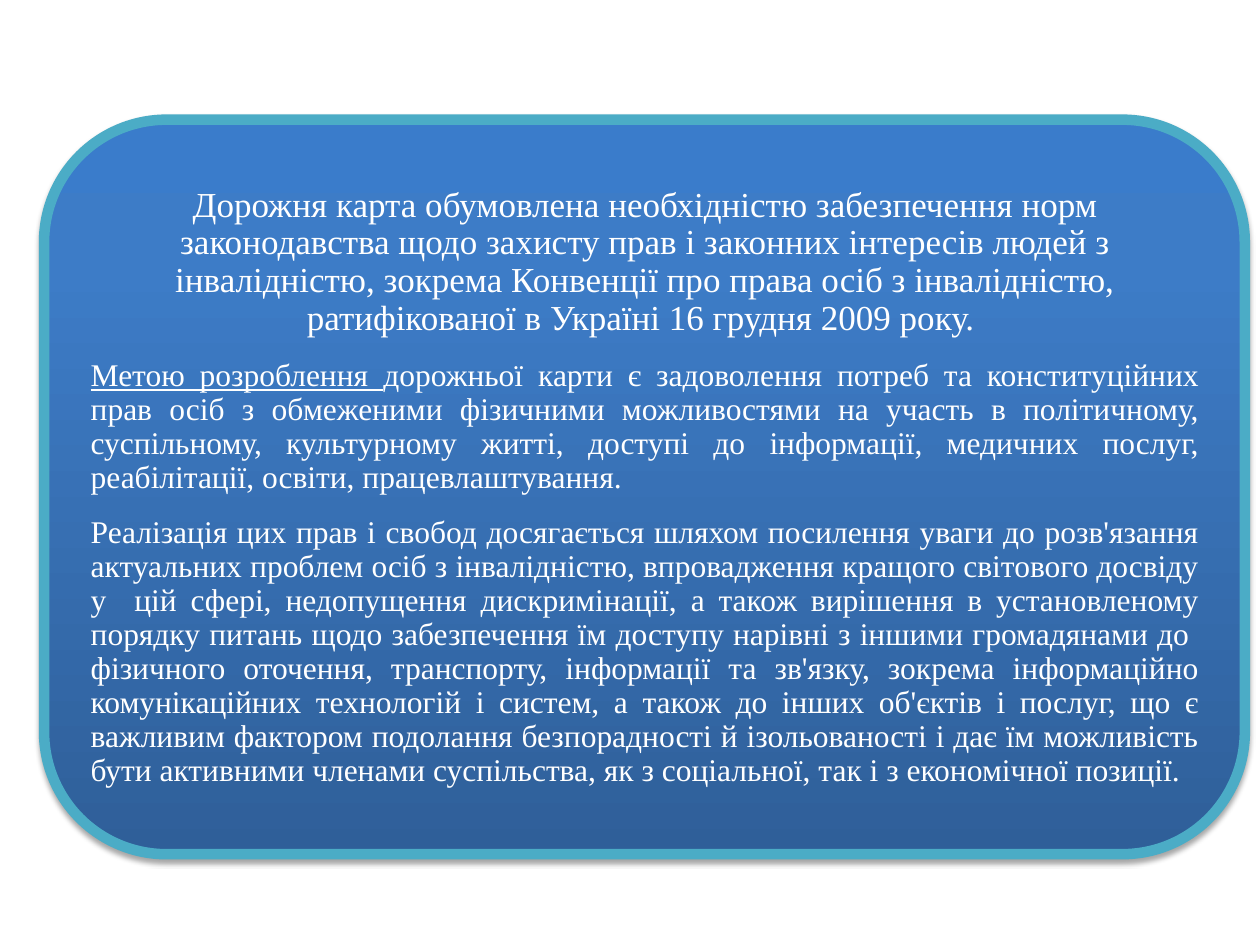
from copy import deepcopy
from dataclasses import dataclass

from lxml.etree import SubElement
from pptx import Presentation
from pptx.dml.color import RGBColor
from pptx.enum.shapes import MSO_SHAPE
from pptx.enum.text import MSO_ANCHOR, PP_ALIGN
from pptx.oxml.ns import qn
from pptx.shapes.autoshape import Shape
from pptx.slide import Slide
from pptx.text.text import TextFrame
from pptx.util import Inches, Pt


@dataclass(frozen=True)
class Statement:
    text: str
    size: int = 18
    align: PP_ALIGN = PP_ALIGN.JUSTIFY
    lead: str = ""


@dataclass(frozen=True)
class Stop:
    position: float
    color: str


STATEMENTS = (
    Statement(
        "Дорожня карта обумовлена необхідністю забезпечення норм законодавства "
        "щодо захисту прав і законних інтересів людей з інвалідністю, зокрема "
        "Конвенції про права осіб з інвалідністю, ратифікованої в Україні "
        "16 грудня 2009 року. ",
        size=20,
        align=PP_ALIGN.CENTER,
    ),
    Statement(
        "дорожньої карти є задоволення потреб та конституційних прав осіб з "
        "обмеженими фізичними можливостями на участь в політичному, суспільному, "
        "культурному житті, доступі до інформації, медичних послуг, реабілітації, "
        "освіти, працевлаштування.",
        lead="Метою розроблення ",
    ),
    Statement(
        "Реалізація цих прав і свобод досягається шляхом посилення уваги до "
        "розв'язання актуальних проблем осіб з інвалідністю, впровадження кращого "
        "світового досвіду у  цій сфері, недопущення дискримінації, а також "
        "вирішення в установленому порядку питань щодо забезпечення їм доступу "
        "нарівні з іншими громадянами до  фізичного оточення, транспорту, "
        "інформації та зв'язку, зокрема інформаційно комунікаційних технологій і "
        "систем, а також до інших об'єктів і послуг, що є важливим фактором "
        "подолання безпорадності й ізольованості і дає їм можливість бути "
        "активними членами суспільства, як з соціальної, так і з економічної "
        "позиції.",
    ),
)
PANEL_STOPS = (Stop(0, "2F5F99"), Stop(0.8, "3D7CC7"), Stop(1, "3A7CCB"))


def rgb(color: str) -> RGBColor:
    return RGBColor.from_string(color)


def fill_gradient(panel: Shape, stops: tuple[Stop, ...]) -> None:
    panel.fill.gradient()
    panel.fill.gradient_angle = 90
    stop_list = panel.fill._xPr.find(qn("a:gradFill")).find(qn("a:gsLst"))
    while len(stop_list) < len(stops):
        stop_list.append(deepcopy(stop_list[-1]))
    for target, stop in zip(panel.fill.gradient_stops, stops):
        target.position = stop.position
        target.color.rgb = rgb(stop.color)


def add_soft_shadow(panel: Shape) -> None:
    panel.shadow.inherit = False
    effects = panel._element.spPr.find(qn("a:effectLst"))
    shadow = SubElement(
        effects, qn("a:outerShdw"), blurRad=str(Pt(3.1)), dist=str(Pt(1.8)),
        dir="5400000", rotWithShape="0",
    )
    shade = SubElement(shadow, qn("a:srgbClr"), val="000000")
    SubElement(shade, qn("a:alpha"), val="35000")


def add_panel(slide: Slide) -> None:
    panel = slide.shapes.add_shape(
        MSO_SHAPE.ROUNDED_RECTANGLE,
        Inches(0.35), Inches(0.95), Inches(9.53), Inches(5.83),
    )
    fill_gradient(panel, PANEL_STOPS)
    panel.line.color.rgb = rgb("4BACC6")
    panel.line.width = Pt(6)
    add_soft_shadow(panel)


def write_statement(frame: TextFrame, statement: Statement, first: bool) -> None:
    paragraph = frame.paragraphs[0] if first else frame.add_paragraph()
    paragraph.alignment = statement.align
    paragraph.line_spacing = 0.9
    paragraph.space_after = Pt(12)
    paragraph.font.name = "Times New Roman"
    paragraph.font.size = Pt(statement.size)
    paragraph.font.color.rgb = rgb("FFFFFF")
    if statement.lead:
        lead = paragraph.add_run()
        lead.text = statement.lead
        lead.font.underline = True
    paragraph.add_run().text = statement.text


def add_statements(slide: Slide) -> None:
    frame = slide.shapes.add_textbox(
        Inches(0.64), Inches(1.24), Inches(8.96), Inches(5.26)
    ).text_frame
    frame.word_wrap = True
    frame.vertical_anchor = MSO_ANCHOR.MIDDLE
    frame.margin_left = frame.margin_right = Inches(0.08)
    frame.margin_top = frame.margin_bottom = Inches(0.08)
    for index, statement in enumerate(STATEMENTS):
        write_statement(frame, statement, first=index == 0)


def main() -> None:
    presentation = Presentation()
    presentation.slide_width = Inches(10)
    presentation.slide_height = Inches(7.5)
    slide = presentation.slides.add_slide(presentation.slide_layouts[6])
    add_panel(slide)
    add_statements(slide)
    presentation.save("out.pptx")


if __name__ == "__main__":
    main()
